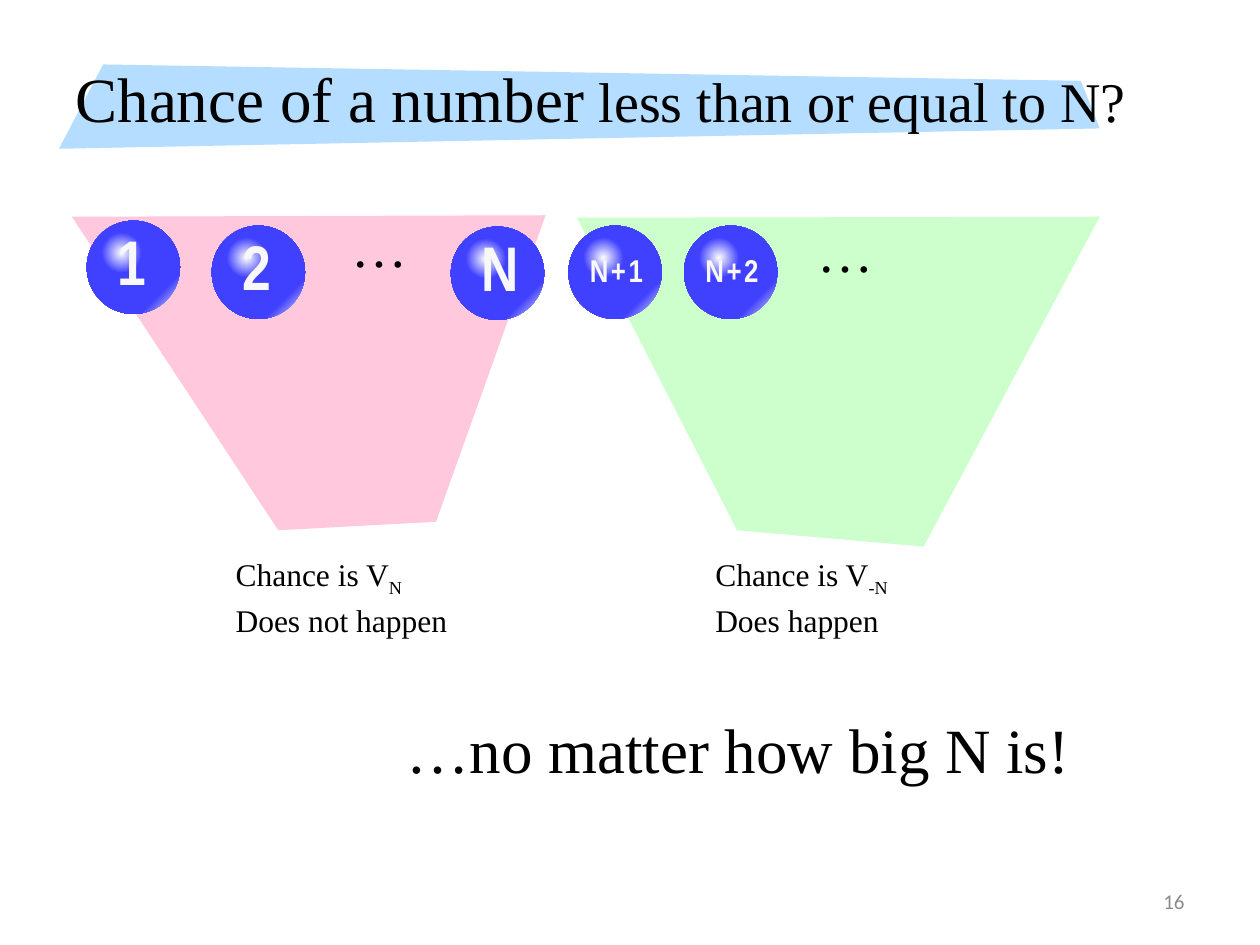
from pptx import Presentation
from pptx.dml.color import RGBColor
from pptx.enum.shapes import MSO_SHAPE
from pptx.enum.text import MSO_ANCHOR, PP_ALIGN
from pptx.oxml import parse_xml
from pptx.oxml.ns import nsdecls, qn
from pptx.util import Cm, Pt

ELLIPSE = MSO_SHAPE.OVAL
MIDDLE = MSO_ANCHOR.MIDDLE
LEFT, RIGHT = PP_ALIGN.LEFT, PP_ALIGN.RIGHT

THEME = {
    "serif": "Times New Roman", "narrow": "Arial Narrow", "sans": "Calibri",
    "ink": "000000", "label": "F8F8F8", "muted": "8C8C8C",
    "band": "B4DDFF", "pink": "FFC8DC", "green": "CCFFCC",
    "ball": "4040FF", "shine": "FFFFFF",
    "large": 36, "medium": 32, "small": 18, "tiny": 12,
}

TITLE = [("Chance of a number", "large"), (" less than or equal to N?", "medium")]
TITLE_BOX = (1.27, 0.76, 21.89, 2.39)
PANELS = [
    ("band", [(2.08, 1.3), (21.79, 1.63), (22.17, 2.59), (1.19, 3)]),
    ("pink", [(1.45, 4.37), (11, 4.34), (8.79, 10.52), (5.61, 10.69)]),
    ("green", [(11.63, 4.39), (22.17, 4.37), (18.62, 11.02), (14.86, 10.69)]),
]
CAPTIONS = [
    ((4.5, 11.07, 4.83, 1.8), "N", "Does not happen"),
    ((14.17, 11.07, 4.09, 1.8), "-N", "Does happen"),
]
BALLS = [
    ("1", 1.75, 4.45), ("2", 4.27, 4.55), ("N", 9.09, 4.57),
    ("N+1", 11.46, 4.55), ("N+2", 13.79, 4.55),
]
BALL_SIZE, SHINE_SIZE = 1.88, 0.91
SHINE_OFFSET = (0.25, 0.19)
LABEL_BOXES = {"large": (0.36, -0.08, 1.4, 1.8), "small": (0.18, 0.38, 1.96, 1.02)}
BALL_FILL = ([(0, "ball"), (78, "ball"), (100, "shine")], (0, 0, 100, 100))
SHINE_FILL = ([(0, "shine"), (64, "ball"), (100, "ball")], (50, 50, 50, 50))
REMARKS = [
    ("…", "medium", (6.83, 4.14, 1.65, 1.63)),
    ("…", "medium", (16.23, 4.24, 1.65, 1.63)),
    ("…no matter how big N is!", "large", (7.95, 14.2, 14.02, 1.8)),
]
PAGE_NUMBER = ("16", (18.21, 17.65, 5.92, 1.02))


def color(name):
    return RGBColor.from_string(THEME[name])


def add_run(shape, paragraph, text, size, font="serif", ink="ink", bold=False, **attributes):
    run = paragraph.add_run()
    run.text = text
    run.font.name = THEME[font]
    run.font.size = Pt(THEME[size])
    run.font.bold = bold
    run.font.color.rgb = color(ink)
    properties = list(shape.element.iter(qn("a:rPr")))[-1]
    for key, value in attributes.items():
        properties.set(key, str(value))


def add_text(slide, box, lines, wrap=False, align=LEFT, lead=0.1, **style):
    shape = slide.shapes.add_textbox(*map(Cm, box))
    frame = shape.text_frame
    frame.word_wrap = wrap
    for index, line in enumerate(lines):
        paragraph = frame.add_paragraph() if index else frame.paragraphs[0]
        paragraph.alignment = align
        paragraph.space_before = Pt(THEME[line[0][1]] * lead)
        for text, size, *baseline in line:
            extra = {"baseline": baseline[0]} if baseline else {}
            add_run(shape, paragraph, text, size, **style, **extra)
    return shape


def add_panel(slide, fill, points):
    corners = [(Cm(x), Cm(y)) for x, y in points]
    builder = slide.shapes.build_freeform(*corners[0])
    builder.add_line_segments(corners[1:], close=True)
    shape = builder.convert_to_shape()
    shape.shadow.inherit = False
    shape.fill.solid()
    shape.fill.fore_color.rgb = color(fill)
    shape.line.fill.background()
    return shape


def add_circle(slide, left, top, size, gradient):
    shape = slide.shapes.add_shape(ELLIPSE, Cm(left), Cm(top), Cm(size), Cm(size))
    shape.shadow.inherit = False
    shape.line.fill.background()
    stops, (l, t, r, b) = gradient
    stop_xml = "".join(
        f'<a:gs pos="{position * 1000}"><a:srgbClr val="{THEME[name]}"/></a:gs>'
        for position, name in stops
    )
    fill = parse_xml(
        f'<a:gradFill {nsdecls("a")} rotWithShape="1"><a:gsLst>{stop_xml}</a:gsLst>'
        f'<a:path path="circle"><a:fillToRect l="{l * 1000}" t="{t * 1000}" '
        f'r="{r * 1000}" b="{b * 1000}"/></a:path></a:gradFill>'
    )
    shape.element.spPr.find(qn("a:prstGeom")).addnext(fill)


def add_ball(slide, label, left, top):
    add_circle(slide, left, top, BALL_SIZE, BALL_FILL)
    add_circle(slide, left + SHINE_OFFSET[0], top + SHINE_OFFSET[1], SHINE_SIZE, SHINE_FILL)
    size = "large" if len(label) == 1 else "small"
    x, y, width, height = LABEL_BOXES[size]
    add_text(slide, (left + x, top + y, width, height), [[(label, size)]], wrap=True,
             font="narrow", ink="label", bold=True, spc=150)


def add_title(slide):
    title = slide.shapes.title
    title.left, title.top, title.width, title.height = map(Cm, TITLE_BOX)
    title.text_frame.vertical_anchor = MIDDLE
    paragraph = title.text_frame.paragraphs[0]
    paragraph.alignment = LEFT
    for text, size in TITLE:
        add_run(title, paragraph, text, size)
    return title


def main():
    presentation = Presentation()
    presentation.slide_width, presentation.slide_height = Cm(25.4), Cm(19.05)
    slide = presentation.slides.add_slide(presentation.slide_layouts[5])
    title = add_title(slide)
    for fill, points in PANELS:
        panel = add_panel(slide, fill, points)
        title.element.addprevious(panel.element)
    for box, subscript, outcome in CAPTIONS:
        first_line = [("Chance is V", "small"), (subscript, "small", -25000)]
        add_text(slide, box, [first_line, [(outcome, "small")]])
    for ball in BALLS:
        add_ball(slide, *ball)
    for text, size, box in REMARKS:
        add_text(slide, box, [[(text, size)]])
    number, box = PAGE_NUMBER
    page = add_text(slide, box, [[(number, "tiny")]], wrap=True, align=RIGHT, lead=0,
                    font="sans", ink="muted")
    page.text_frame.vertical_anchor = MIDDLE
    presentation.save("out.pptx")


if __name__ == "__main__":
    main()
